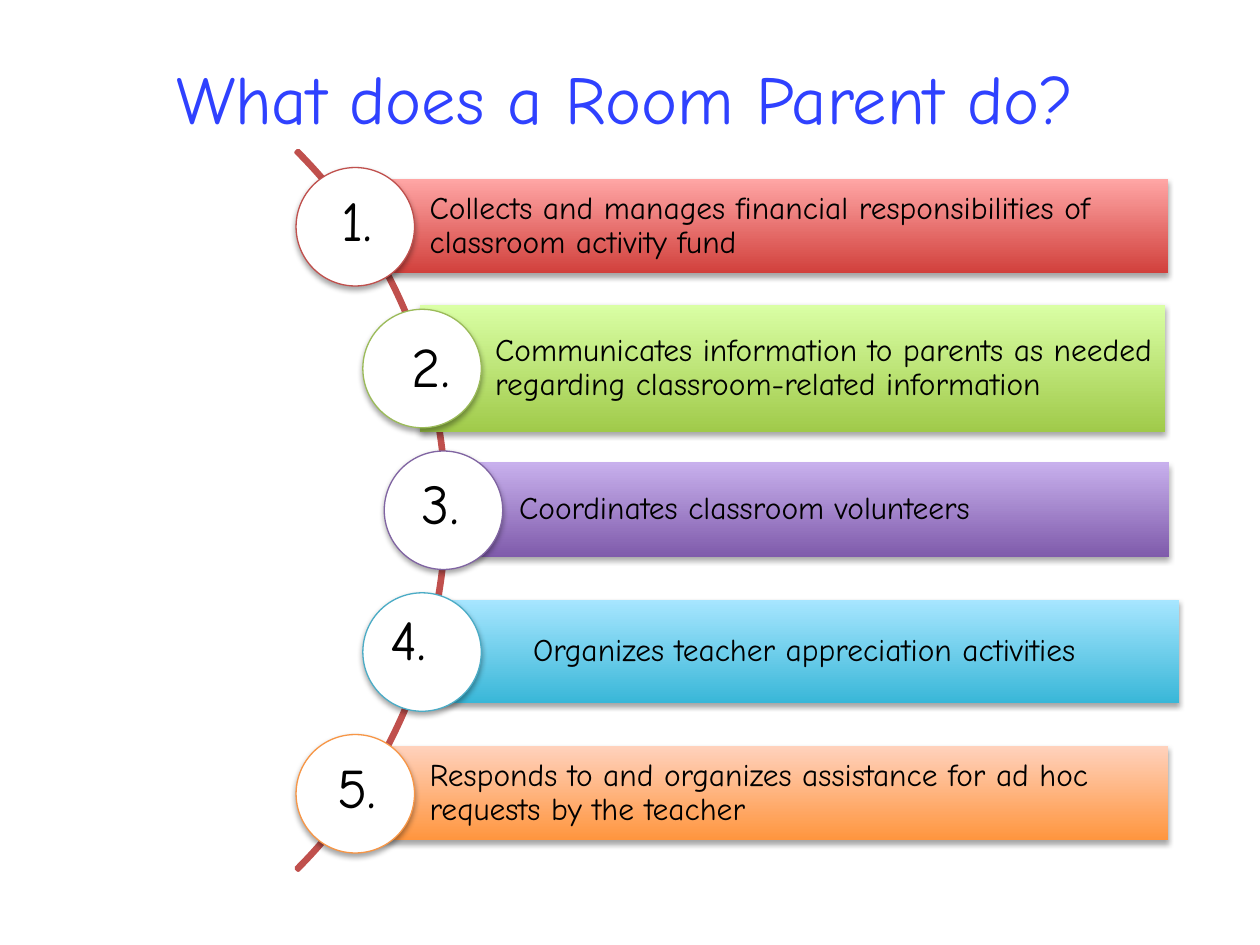
from dataclasses import dataclass

import pptx
import pptx.dml.color
import pptx.enum.shapes
import pptx.enum.text
import pptx.oxml
import pptx.oxml.ns
import pptx.util
from pptx.util import Inches

SHAPES = pptx.enum.shapes.MSO_SHAPE
ALIGN = pptx.enum.text.PP_ALIGN
MIDDLE = pptx.enum.text.MSO_ANCHOR.MIDDLE
TYPEFACE = "Comic Neue"
CIRCLE_SIZE = 0.94
FIRST_CIRCLE_TOP = 1.33
STEP_PITCH = 1.125
BAR_FORMAT = {
    "margin_left": Inches(0.6),
    "margin_right": Inches(0.05),
    "margin_top": Inches(0.05),
    "margin_bottom": Inches(0.05),
    "vertical_anchor": MIDDLE,
    "word_wrap": True,
}

Box = tuple[float, float, float, float]


@dataclass(frozen=True)
class Duty:
    wording: str
    bar: Box
    dark: str
    light: str
    outline: str
    circle_left: float
    number: Box
    number_align: ALIGN = ALIGN.CENTER
    extra_indent: float = 0


DUTIES = [
    Duty("Collects and manages financial responsibilities of classroom activity fund",
         (2.81, 1.42, 6.46, 0.75), "D1403C", "FFA6A5", "C0504D", 2.35,
         (2.42, 1.42, 0.83, 0.64)),
    Duty("Communicates information to parents as needed regarding "
         "classroom-related information",
         (3.33, 2.42, 5.92, 1.01), "A0CA4A", "DAFFA5", "9BBB59", 2.88,
         (2.92, 2.58, 1, 0.64)),
    Duty("Coordinates classroom volunteers",
         (3.52, 3.67, 5.76, 0.75), "7F5BAB", "C8B0ED", "8064A2", 3.05,
         (3.08, 3.67, 0.83, 0.64)),
    Duty("Organizes teacher appreciation activities",
         (3.44, 4.76, 5.92, 0.82), "39B7D8", "A7E6FF", "4BACC6", 2.88,
         (3, 4.75, 0.83, 0.64), ALIGN.LEFT, 0.19),
    Duty("Responds to and organizes assistance for ad hoc requests by the teacher",
         (2.81, 5.92, 6.46, 0.75), "FF953E", "FFD2BD", "F79646", 2.35,
         (2.58, 5.92, 0.67, 0.64), ALIGN.LEFT),
]


def color(hex_value: str) -> pptx.dml.color.RGBColor:
    return pptx.dml.color.RGBColor.from_string(hex_value)


def apply_format(target, values: dict) -> None:
    for attribute, value in values.items():
        setattr(target, attribute, value)


def write(frame, wording: str, size: float, align: ALIGN,
          ink: str = "000000", spacing: float = 1.0) -> None:
    paragraph = frame.paragraphs[0]
    apply_format(paragraph, {"alignment": align, "line_spacing": spacing})
    run = paragraph.add_run()
    run.text = wording
    apply_format(run.font, {"name": TYPEFACE, "size": pptx.util.Pt(size)})
    run.font.color.rgb = color(ink)


def add_label(slide, box: Box, wording: str, size: float, align: ALIGN,
              ink: str = "000000"):
    frame = slide.shapes.add_textbox(*map(Inches, box)).text_frame
    frame.word_wrap = True
    write(frame, wording, size, align, ink)
    return frame


def add_flat(slide, preset: SHAPES, box: Box):
    flat = slide.shapes.add_shape(preset, *map(Inches, box))
    flat.shadow.inherit = False
    return flat


def set_outline(outlined, hex_value: str, width: float) -> None:
    outlined.line.color.rgb = color(hex_value)
    outlined.line.width = pptx.util.Pt(width)


def cast_shadow(raised) -> None:
    effects = raised.element.spPr.find(pptx.oxml.ns.qn("a:effectLst"))
    effects.append(pptx.oxml.parse_xml(
        f'<a:outerShdw {pptx.oxml.ns.nsdecls("a")} blurRad="40000" dist="23000" '
        'dir="5400000" rotWithShape="0"><a:srgbClr val="000000">'
        '<a:alpha val="35000"/></a:srgbClr></a:outerShdw>'))


def add_arc(slide) -> None:
    arc = add_flat(slide, SHAPES.BLOCK_ARC, (-4.53, 0.01, 8.08, 8.08))
    for position, value in enumerate((189, 27, 0.003)):
        arc.adjustments[position] = value
    arc.fill.background()
    set_outline(arc, "C0504D", 2)


def add_duty(slide, index: int, duty: Duty) -> None:
    bar = add_flat(slide, SHAPES.RECTANGLE, duty.bar)
    bar.line.fill.background()
    bar.fill.gradient()
    bar.fill.gradient_angle = 90
    for stop, shade in zip(bar.fill.gradient_stops, (duty.dark, duty.light)):
        stop.color.rgb = color(shade)
    cast_shadow(bar)
    apply_format(bar.text_frame, BAR_FORMAT)
    bar.text_frame.margin_left += Inches(duty.extra_indent)
    write(bar.text_frame, duty.wording, 18, ALIGN.LEFT, spacing=0.9)

    circle_top = FIRST_CIRCLE_TOP + index * STEP_PITCH
    circle = add_flat(slide, SHAPES.OVAL,
                      (duty.circle_left, circle_top, CIRCLE_SIZE, CIRCLE_SIZE))
    circle.fill.solid()
    circle.fill.fore_color.rgb = color("FFFFFF")
    set_outline(circle, duty.outline, 0.75)
    cast_shadow(circle)


def main() -> None:
    deck = pptx.Presentation()
    deck.slide_width, deck.slide_height = Inches(10), Inches(7.5)
    slide = deck.slides.add_slide(deck.slide_layouts[6])
    add_arc(slide)
    for index, duty in enumerate(DUTIES):
        add_duty(slide, index, duty)
    title = add_label(slide, (0.17, 0.35, 9.58, 0.84),
                      "What does a Room Parent do?", 39, ALIGN.CENTER, "2F41FF")
    title.vertical_anchor = MIDDLE
    for number, duty in enumerate(DUTIES, start=1):
        add_label(slide, duty.number, f"{number}.", 32, duty.number_align)
    deck.save("out.pptx")


if __name__ == "__main__":
    main()
